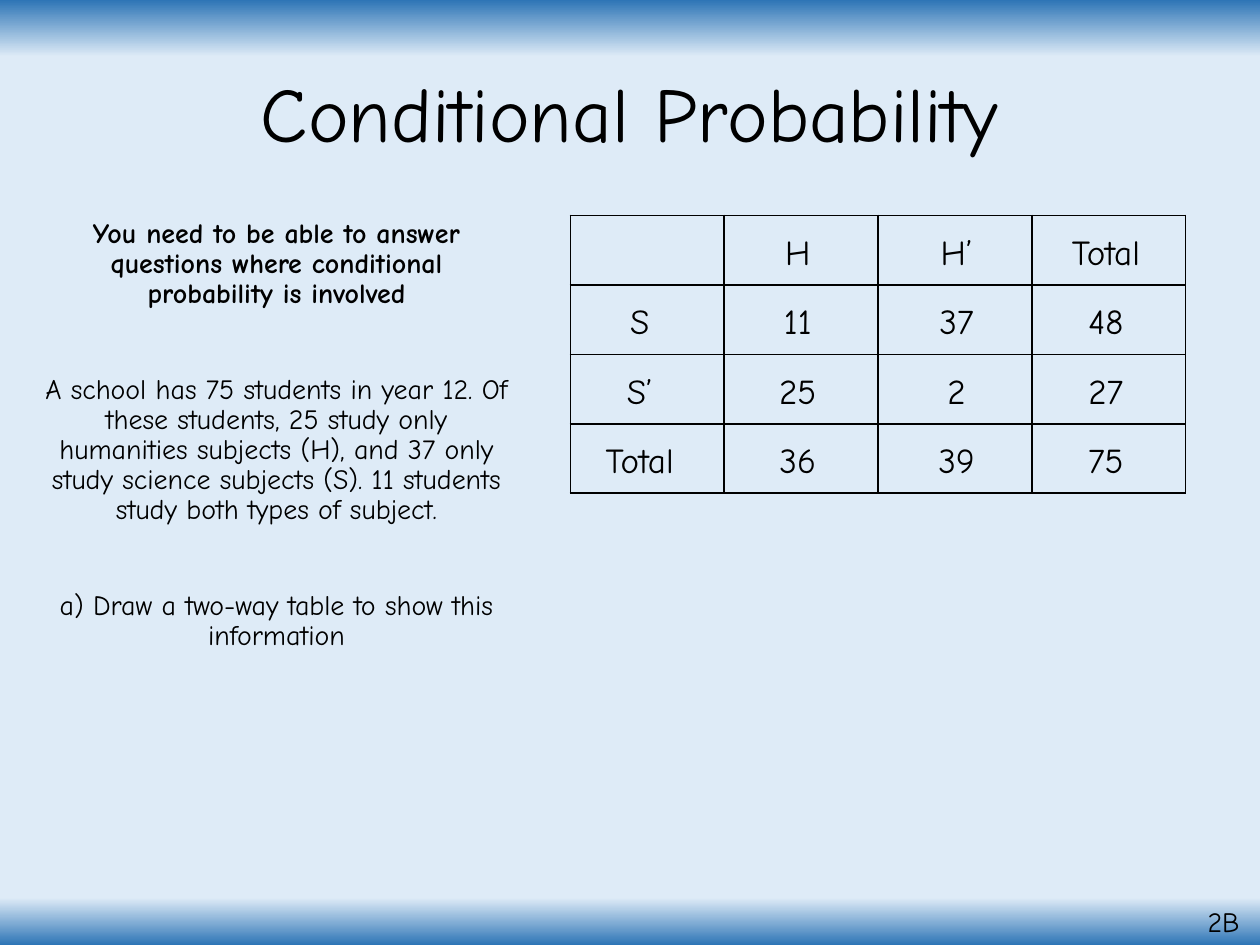
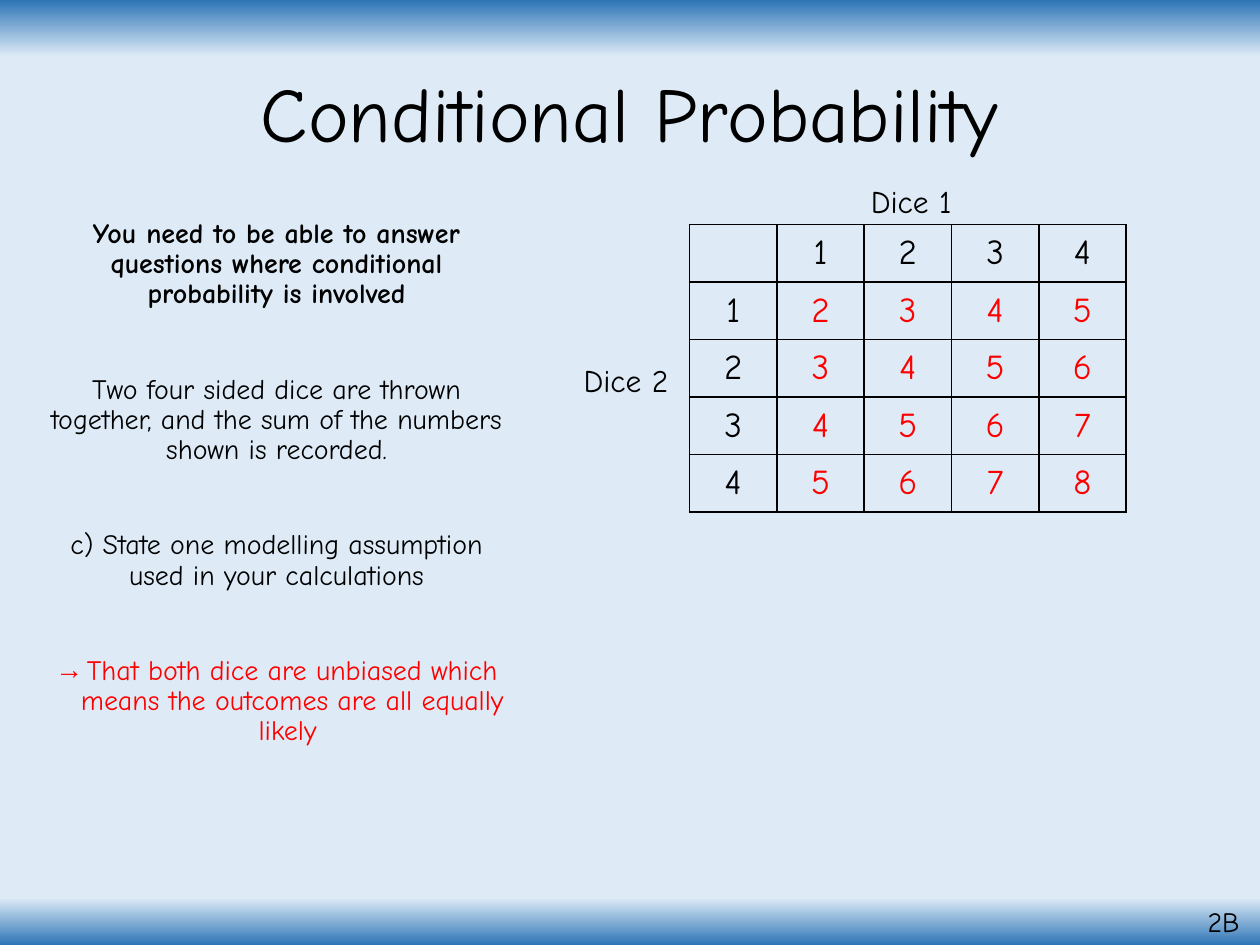
from dataclasses import dataclass

from lxml.etree import SubElement
from pptx import Presentation
from pptx.dml.color import RGBColor
from pptx.enum.text import MSO_ANCHOR as Anchor, MSO_AUTO_SIZE as AutoSize, PP_ALIGN as Align
from pptx.oxml.ns import qn
from pptx.util import Emu, Inches, Pt

FONT = "Comic Neue"
BLACK, RED, BLUE, PALE = "000000", "FF0000", "2E75B6", "DEEBF7"
BACKGROUND_STOPS = [(0, BLUE), (6, PALE), (95, PALE), (100, BLUE)]
SLIDE_WIDTH, SLIDE_HEIGHT = Inches(10), Inches(7.5)
GRID_COLUMNS, GRID_ROWS = 100, 75
TITLE = "Conditional Probability"
SECTION = "2B"
OBJECTIVE = "You need to be able to answer questions where conditional probability is involved"
SCHOOL = (
    "A school has 75 students in year 12. Of these students, 25 study only humanities "
    "subjects (H), and 37 only study science subjects (S). 11 students study both types of subject."
)
DICE = "Two four sided dice are thrown together, and the sum of the numbers shown is recorded."


@dataclass
class Box:
    """A rectangle in grid columns and rows."""
    left: float
    top: float
    width: float
    height: float

    def emu(self):
        """Return left, top, width and height as slide lengths."""
        column, row = SLIDE_WIDTH / GRID_COLUMNS, SLIDE_HEIGHT / GRID_ROWS
        sizes = (self.left * column, self.top * row, self.width * column, self.height * row)
        return [Emu(round(size)) for size in sizes]

    def inner(self, left, top, width, height):
        """Return a box offset from this one's corner."""
        return Box(self.left + left, self.top + top, width, height)


TITLE_BOX = Box(6.9, 2.1, 86.2, 14.5)
FOOTER_BOX = Box(94.2, 71.6, 5.8, 3.4)


def color(hex_string):
    """Turn a hex string into a colour."""
    return RGBColor.from_string(hex_string)


def move(shape, box):
    """Put a shape in a box."""
    shape.left, shape.top, shape.width, shape.height = box.emu()


def write(paragraph, text, size, hex_string=BLACK, bold=False, align=Align.CENTER, spacing=None):
    """Fill a paragraph and format it."""
    paragraph.text = text
    paragraph.alignment = align
    paragraph.line_spacing = spacing
    font = paragraph.font
    font.name, font.size, font.bold = FONT, Pt(size), bold
    font.color.rgb = color(hex_string)


def set_bullet(paragraph, character=None):
    """Give a paragraph a hanging bullet, or none."""
    properties = paragraph._p.get_or_add_pPr()
    indent = Inches(0.25) if character else 0
    properties.set("marL", str(indent))
    properties.set("indent", str(-indent))
    bullet = properties.makeelement(qn("a:buChar" if character else "a:buNone"))
    if character:
        bullet.set("char", character)
    properties.insert_element_before(bullet, "a:tabLst", "a:defRPr", "a:extLst")


def paint_background(master):
    """Shade the top and bottom edges of every slide."""
    fill = master.background.fill
    fill.gradient()
    fill.gradient_angle = 270
    stops = master.element.find(".//" + qn("a:gsLst"))
    stops.clear()
    for position, hex_string in BACKGROUND_STOPS:
        stop = SubElement(stops, qn("a:gs"), pos=str(position * 1000))
        SubElement(stop, qn("a:srgbClr"), val=hex_string)


def add_label(slide, box, text, size, align=Align.CENTER, wrap=True, spacing=None):
    """Add a one-paragraph text box."""
    frame = slide.shapes.add_textbox(*box.emu()).text_frame
    frame.word_wrap = wrap
    write(frame.paragraphs[0], text, size, align=align, spacing=spacing)


def fill_body(body, box, questions, answer):
    """List the objective, the questions and an optional answer."""
    move(body, box)
    frame = body.text_frame
    frame.auto_size = AutoSize.NONE
    frame.vertical_anchor = Anchor.TOP
    texts = [OBJECTIVE, *questions] + ([answer] if answer else [])
    for index, text in enumerate(texts):
        paragraph = frame.add_paragraph() if index else frame.paragraphs[0]
        is_answer = text == answer
        write(paragraph, text, 16, RED if is_answer else BLACK, bold=not index, spacing=0.9)
        paragraph.space_before = Pt(37.2 if index else 10)
        set_bullet(paragraph, "→" if is_answer else None)


def add_base_slide(presentation, body_box, questions, answer=None):
    """Add a slide with title, body and section number."""
    slide = presentation.slides.add_slide(presentation.slide_layouts[1])
    title, body = slide.placeholders
    move(title, TITLE_BOX)
    title.text_frame.vertical_anchor = Anchor.MIDDLE
    write(title.text_frame.paragraphs[0], TITLE, 44, spacing=0.9)
    fill_body(body, body_box, questions, answer)
    add_label(slide, FOOTER_BOX, SECTION, 16, spacing=0.9)
    return slide


def add_borders(cell):
    """Draw a thin black line on each side of a cell."""
    properties = cell._tc.get_or_add_tcPr()
    for index, side in enumerate(("lnL", "lnR", "lnT", "lnB")):
        line = properties.makeelement(qn(f"a:{side}"), w=str(Pt(1)))
        fill = SubElement(line, qn("a:solidFill"))
        SubElement(fill, qn("a:srgbClr"), val=BLACK)
        properties.insert(index, line)


def add_ruled_table(slide, box, row_count, column_count):
    """Add an empty table with ruled, unfilled cells."""
    table = slide.shapes.add_table(row_count, column_count, *box.emu()).table
    table.first_row = table.horz_banding = False
    for cell in table.iter_cells():
        cell.fill.background()
        cell.vertical_anchor = Anchor.MIDDLE
        add_borders(cell)
    return table


def add_school_table(slide, box):
    """Add a ruled table with its entries as labels on top."""
    counts = [[11, 37], [25, 2]]
    counts.append([sum(column) for column in zip(*counts)])
    rows = [["", "H", "H’", "Total"]]
    rows += [[name, *row, sum(row)] for name, row in zip(("S", "S’", "Total"), counts)]
    add_ruled_table(slide, box, len(rows), len(rows[0]))
    label_width, label_height = 7.9, 4.4
    centers = (5.5, 18.05, 30.65, 42.5)
    for row_index, row in enumerate(rows):
        top = 0.7 + row_index * box.height / len(rows)
        for center, value in zip(centers, row):
            if value:
                label_box = box.inner(center - label_width / 2, top, label_width, label_height)
                add_label(slide, label_box, str(value), 20)


def add_dice_table(slide, box):
    """Add the sums of two dice, with a label for each die."""
    faces = range(1, 5)
    rows = [["", *faces]] + [[second, *(first + second for first in faces)] for second in faces]
    table = add_ruled_table(slide, box, len(rows), len(rows[0]))
    for row_index, row in enumerate(rows):
        for column_index, value in enumerate(row):
            paragraph = table.cell(row_index, column_index).text_frame.paragraphs[0]
            write(paragraph, str(value), 20, RED if row_index and column_index else BLACK)
    for text, left, top in (("Dice 1", 13.4, -3.9), ("Dice 2", -9.4, 10.3)):
        add_label(slide, box.inner(left, top, 9.3, 4), text, 18, Align.LEFT, wrap=False)


def add_school_slide(presentation):
    """Show the two-way table of subjects with its totals."""
    questions = [SCHOOL, "a) Draw a two-way table to show this information"]
    slide = add_base_slide(presentation, Box(2.55, 16.9, 38.8, 50.7), questions)
    add_school_table(slide, Box(45.27, 17.1, 48.83, 22.05))


def add_dice_slide(presentation):
    """Show the sums of two dice and the modelling assumption."""
    slide = add_base_slide(
        presentation,
        Box(2.55, 16.9, 38.8, 56.8),
        [DICE, "c) State one modelling assumption used in your calculations"],
        "That both dice are unbiased which means the outcomes are all equally likely ",
    )
    add_dice_table(slide, Box(54.73, 17.83, 34.65, 22.83))


def main():
    """Build the presentation and save it."""
    presentation = Presentation()
    presentation.slide_width, presentation.slide_height = SLIDE_WIDTH, SLIDE_HEIGHT
    paint_background(presentation.slide_master)
    add_school_slide(presentation)
    add_dice_slide(presentation)
    presentation.save("out.pptx")


if __name__ == "__main__":
    main()
